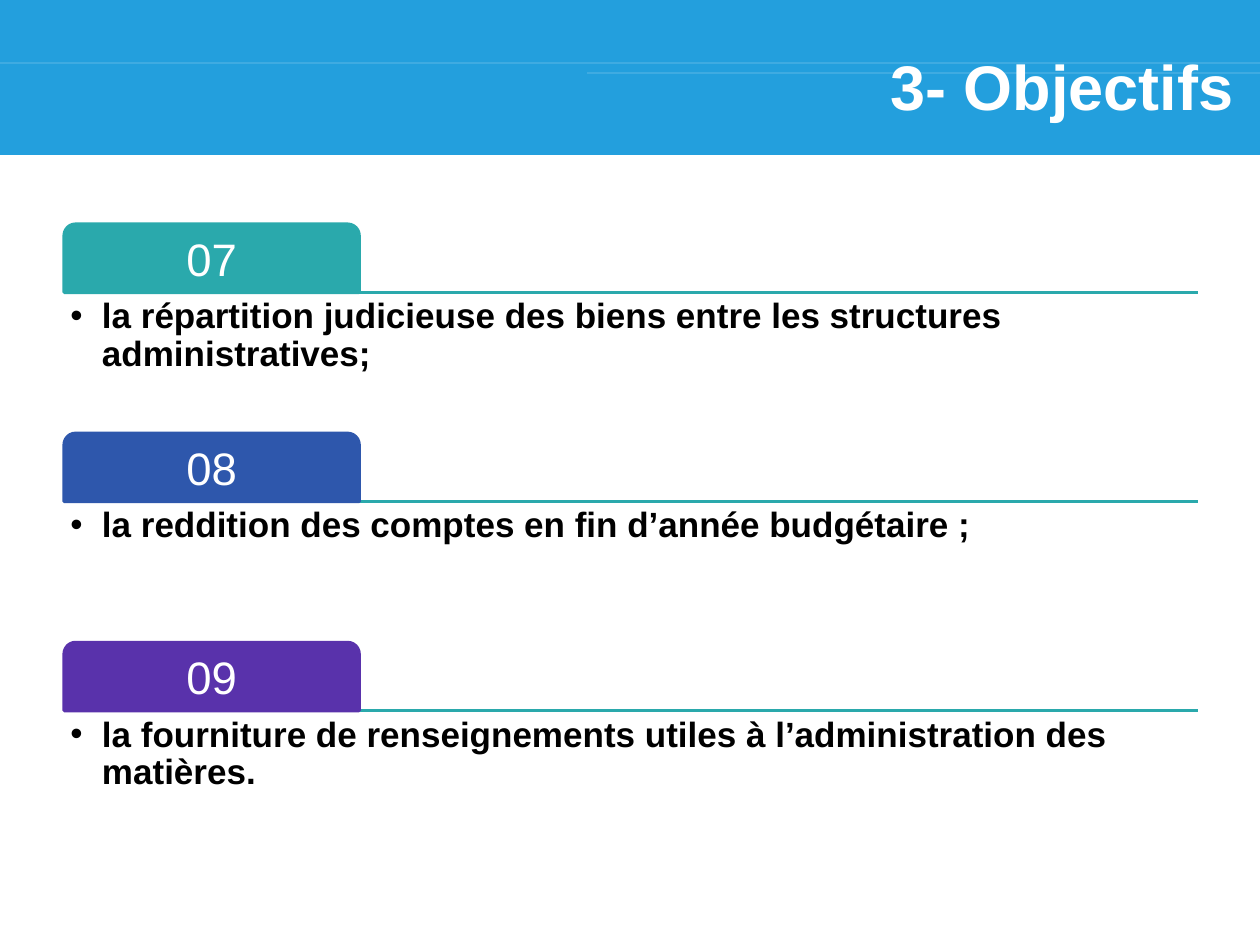
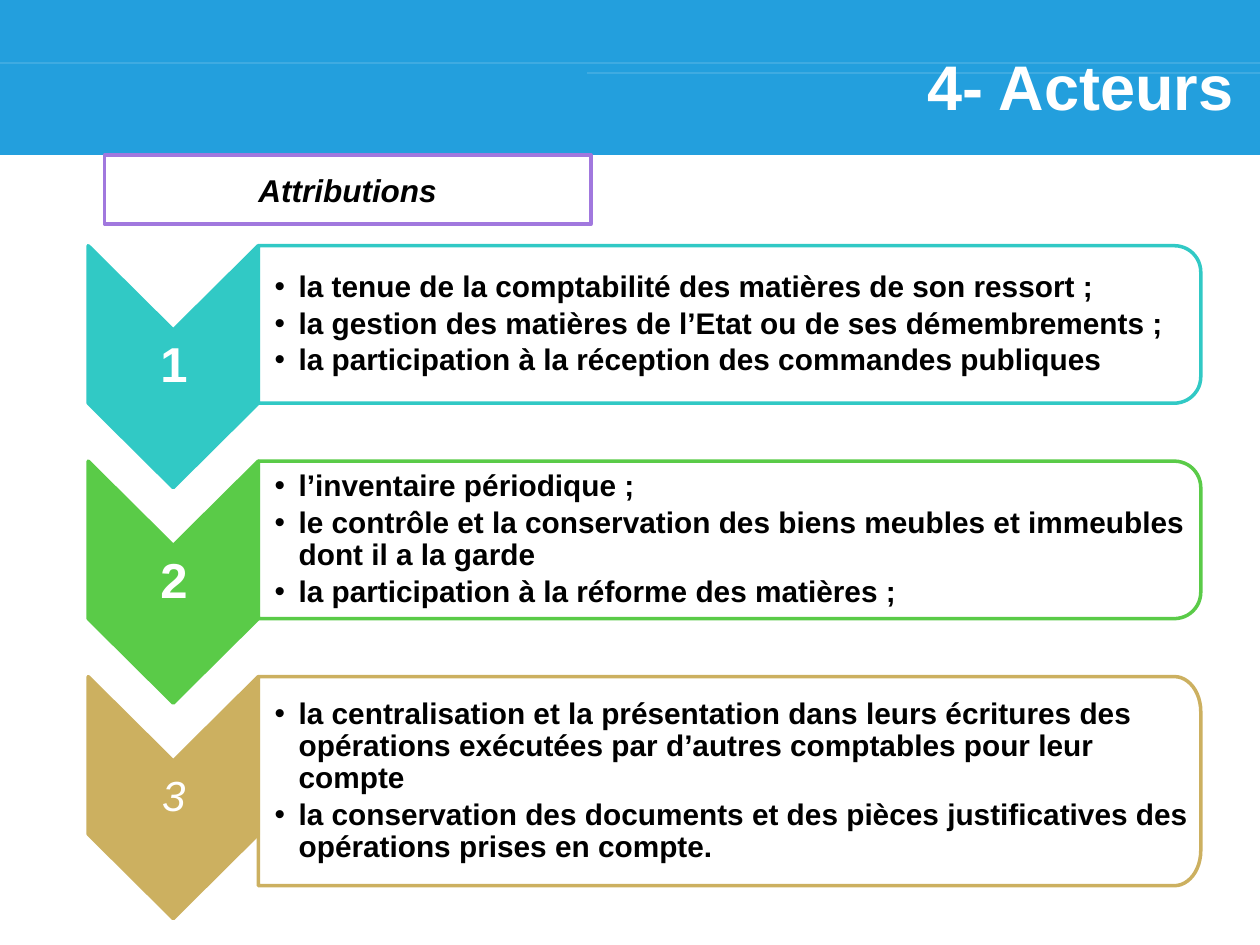
from math import cos, pi, sin

from lxml import etree
from pptx import Presentation
from pptx.dml.color import RGBColor
from pptx.enum.shapes import MSO_CONNECTOR, MSO_SHAPE
from pptx.enum.text import MSO_ANCHOR, PP_ALIGN
from pptx.oxml.ns import qn
from pptx.util import Inches, Pt

RECTANGLE = MSO_SHAPE.RECTANGLE
ROUND_TOP = MSO_SHAPE.ROUND_2_SAME_RECTANGLE
STRAIGHT = MSO_CONNECTOR.STRAIGHT
TOP, MIDDLE = MSO_ANCHOR.TOP, MSO_ANCHOR.MIDDLE
LEFT, CENTER, RIGHT = PP_ALIGN.LEFT, PP_ALIGN.CENTER, PP_ALIGN.RIGHT

FONT = "Arial"
TITLE_ONLY = 5
WHITE = RGBColor(0xFF, 0xFF, 0xFF)
BLACK = RGBColor(0x00, 0x00, 0x00)
BAND_BLUE = RGBColor(0x23, 0x9F, 0xDD)
TEAL = RGBColor(0x2A, 0xA9, 0xAC)
NAVY = RGBColor(0x2E, 0x57, 0xAC)
PURPLE = RGBColor(0x59, 0x32, 0xAB)
LILAC = RGBColor(0xA1, 0x78, 0xDE)
TURQUOISE = RGBColor(0x31, 0xC9, 0xC5)
GREEN = RGBColor(0x5A, 0xCB, 0x48)
SAND = RGBColor(0xCC, 0xB0, 0x60)

OBJECTIVES = [
    ("07", TEAL, "la répartition judicieuse des biens entre les structures administratives;"),
    ("08", NAVY, "la reddition des comptes en fin d’année budgétaire ;"),
    ("09", PURPLE, "la fourniture de renseignements utiles à l’administration des matières."),
]
ATTRIBUTIONS = [
    ("1", TURQUOISE, 1.25, dict(size=28, bold=True), [
        "la tenue de la comptabilité des matières de son ressort ;",
        "la gestion des matières de l’Etat ou de ses démembrements ;",
        "la participation à la réception des commandes publiques",
    ]),
    ("2", GREEN, 1.25, dict(size=28, bold=True), [
        "l’inventaire périodique ;",
        "le contrôle et la conservation des biens meubles et immeubles dont il a la garde",
        "la participation à la réforme des matières ;",
    ]),
    ("3", SAND, 1.66, dict(size=24, italic=True), [
        "la centralisation et la présentation dans leurs écritures des opérations "
        "exécutées par d’autres comptables pour leur compte",
        "la conservation des documents et des pièces justificatives des opérations "
        "prises en compte.",
    ]),
]


class SlideMaker:
    def __init__(self):
        self.deck = Presentation()
        self.deck.slide_width = Inches(10)
        self.deck.slide_height = Inches(7.5)
        self.layout = self.deck.slide_layouts[TITLE_ONLY]
        self.page = None

    def new_page(self, title):
        self.page = self.deck.slides.add_slide(self.layout)
        if len(self.deck.slides) == 1:
            self.share_band()
        box = self.page.shapes.title
        box.left, box.top = Inches(6.57), Inches(0.24)
        box.width, box.height = Inches(3.32), Inches(0.87)
        self.put_text(box, [title], 36, WHITE, align=RIGHT, bold=True)

    def share_band(self):
        band = self.shape(RECTANGLE, 0, 0, 10, 1.23, BAND_BLUE)
        rules = [self.rule(left, y, 10, WHITE, 0.75, 20) for left, y in ((0, 0.5), (4.66, 0.58))]
        tree = self.layout.shapes.element
        for index, part in enumerate([band, *rules], start=2):
            tree.insert(index, part.element)

    def paint(self, shape, fill, line=None):
        shape.shadow.inherit = False
        shape.fill.solid()
        shape.fill.fore_color.rgb = fill
        if line is None:
            shape.line.fill.background()
        else:
            shape.line.color.rgb = line
            shape.line.width = Pt(2)
        return shape

    def set_opacity(self, shape, percent):
        color = next(shape.element.spPr.iter(qn("a:srgbClr")))
        etree.SubElement(color, qn("a:alpha")).set("val", str(percent * 1000))

    def shape(self, kind, left, top, width, height, fill, line=None):
        box = self.page.shapes.add_shape(
            kind, Inches(left), Inches(top), Inches(width), Inches(height))
        return self.paint(box, fill, line)

    def outline(self, points, fill, line):
        corners = [(Inches(x), Inches(y)) for x, y in points]
        builder = self.page.shapes.build_freeform(*corners[0])
        builder.add_line_segments(corners[1:], close=True)
        return self.paint(builder.convert_to_shape(), fill, line)

    def rule(self, left, y, right, color, weight, opacity=None):
        line = self.page.shapes.add_connector(
            STRAIGHT, Inches(left), Inches(y), Inches(right), Inches(y))
        line.line.color.rgb = color
        line.line.width = Pt(weight)
        if opacity:
            self.set_opacity(line, opacity)
        etree.SubElement(line.element.spPr, qn("a:effectLst"))
        return line

    def text_box(self, left, top, width, height):
        return self.page.shapes.add_textbox(
            Inches(left), Inches(top), Inches(width), Inches(height))

    def put_text(self, box, texts, size, color, align=CENTER, anchor=MIDDLE, insets=None,
                 spacing=None, hanging=None, bold=False, italic=False):
        frame = box.text_frame
        frame.word_wrap = True
        frame.vertical_anchor = anchor
        if insets:
            (frame.margin_left, frame.margin_top,
             frame.margin_right, frame.margin_bottom) = map(Inches, insets)
        for index, text in enumerate(texts):
            para = frame.add_paragraph() if index else frame.paragraphs[0]
            if hanging:
                self.bullet(para, hanging)
                para.space_after = Pt(round(size * 0.15, 1))
            para.alignment = align
            if spacing:
                para.line_spacing = spacing
            span = para.add_run()
            span.text = text
            span.font.name = FONT
            span.font.size = Pt(size)
            span.font.bold = bold
            span.font.italic = italic
            span.font.color.rgb = color

    def bullet(self, para, hanging):
        properties = para._p.get_or_add_pPr()
        properties.set("marL", str(Inches(hanging)))
        properties.set("indent", str(-Inches(hanging)))
        etree.SubElement(properties, qn("a:buFont")).set("typeface", FONT)
        etree.SubElement(properties, qn("a:buChar")).set("char", "•")

    def objective(self, top, number, color, text):
        left, width, tab_height = 0.51, 9, 0.54
        base = top + tab_height
        self.rule(left, base, left + width, TEAL, 2)
        tab = self.shape(ROUND_TOP, left, top, 2.34, tab_height, color, color)
        self.put_text(tab, [number], 26, WHITE, insets=(0.08, 0.08, 0.08, 0.05), spacing=0.9)
        box = self.text_box(left, base, width, 1.09)
        self.put_text(box, [text], 20, BLACK, LEFT, TOP, (0.05,) * 4, 0.9, 0.25, bold=True)

    def chevron(self, left, top, color, number, style):
        width, side, point = 1.35, 1.25, 0.67
        middle, right = left + width / 2, left + width
        arrow = self.outline([
            (right, top), (right, top + side), (middle, top + side + point),
            (left, top + side), (left, top), (middle, top + point),
        ], color, color)
        self.put_text(arrow, [number], color=WHITE, insets=(0.03, 0.7, 0.02, 0.7),
                      spacing=0.9, **style)

    def panel(self, left, top, height, color, texts):
        right, bottom = left + 7.48, top + height
        across, down = 0.21, height / 6
        angles = [step * pi / 24 for step in range(13)]
        upper = [(right - across + across * sin(a), top + down - down * cos(a)) for a in angles]
        lower = [(x, top + bottom - y) for x, y in reversed(upper)]
        box = self.outline([(left, top), *upper, *lower, (left, bottom)], WHITE, color)
        self.set_opacity(box, 90)
        self.put_text(box, texts, 17, BLACK, LEFT, insets=(0.13, 0.07, 0.07, 0.07),
                      spacing=0.9, hanging=0.19, bold=True)


def main():
    maker = SlideMaker()

    maker.new_page("3- Objectifs")
    for row, objective in enumerate(OBJECTIVES):
        maker.objective(1.78 + row * 1.66, *objective)

    maker.new_page("4- Acteurs")
    for row, (number, color, height, style, texts) in enumerate(ATTRIBUTIONS):
        top = 1.95 + row * 1.71
        maker.chevron(0.7, top, color, number, style)
        maker.panel(2.05, top, height, color, texts)
    heading = maker.shape(RECTANGLE, 0.83, 1.23, 3.86, 0.55, WHITE, LILAC)
    maker.put_text(heading, ["Attributions"], 18, BLACK, bold=True, italic=True)

    maker.deck.save("out.pptx")


if __name__ == "__main__":
    main()
